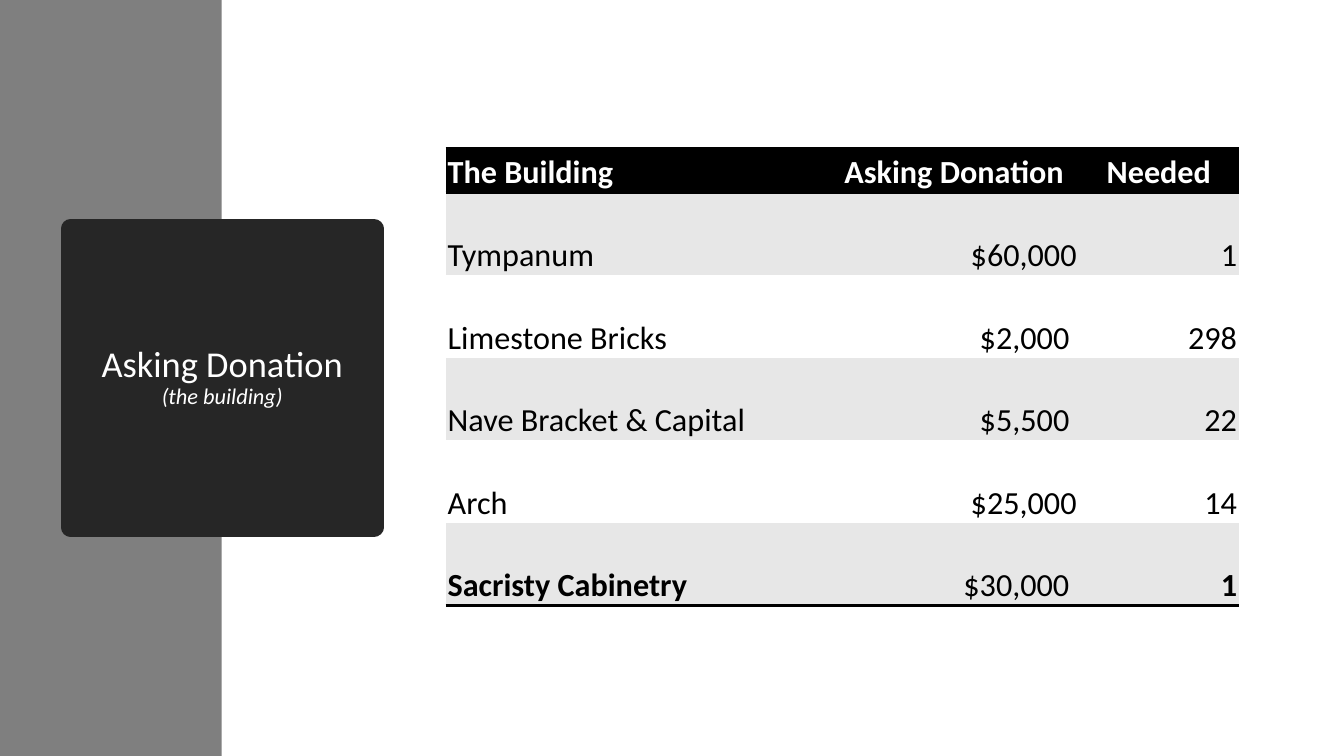
from lxml import etree
from pptx import Presentation
from pptx.dml.color import RGBColor
from pptx.enum.shapes import MSO_SHAPE
from pptx.enum.text import MSO_ANCHOR, PP_ALIGN
from pptx.oxml.ns import qn
from pptx.util import Inches, Pt

RECTANGLE = MSO_SHAPE.RECTANGLE
LEFT, CENTER, RIGHT = PP_ALIGN.LEFT, PP_ALIGN.CENTER, PP_ALIGN.RIGHT
MIDDLE, BOTTOM = MSO_ANCHOR.MIDDLE, MSO_ANCHOR.BOTTOM

WHITE = RGBColor(0xFF, 0xFF, 0xFF)
BLACK = RGBColor(0x00, 0x00, 0x00)
SIDEBAR_GRAY = RGBColor(0x7F, 0x7F, 0x7F)
TITLE_GRAY = RGBColor(0x26, 0x26, 0x26)
BAND_GRAY = RGBColor(0xE7, 0xE7, 0xE7)

FONT = "Calibri"
SLIDE_WIDTH, SLIDE_HEIGHT = Inches(13.33), Inches(7.5)
SIDEBAR_SHARE = 0.165
TITLE_SIZE, SUBTITLE_SIZE, TABLE_SIZE = 26, 16, 23
NO_TABLE_STYLE = "{2D5ABB26-0587-4C30-8999-92F81FD0307C}"
COLUMN_WIDTHS = [Inches(3.81), Inches(2.47), Inches(1.59)]
HEADER_HEIGHT, ROW_HEIGHT = Inches(0.44), Inches(0.82)

HEADINGS = ["The Building", "Asking Donation", "Needed"]
DONATIONS = [
    ["Tympanum", " $60,000", "1"],
    ["Limestone Bricks", " $2,000 ", "298"],
    ["Nave Bracket & Capital", " $5,500 ", "22"],
    ["Arch", " $25,000", "14"],
    ["Sacristy Cabinetry", " $30,000 ", "1"],
]


def format_run(run, size, color, bold=False, italic=False):
    run.font.name = FONT
    run.font.size = Pt(size)
    run.font.color.rgb = color
    run.font.bold = bold
    run.font.italic = italic


def add_panel(slide, width_share, color):
    panel = slide.shapes.add_shape(
        RECTANGLE, 0, 0, int(SLIDE_WIDTH * width_share), SLIDE_HEIGHT)
    panel.shadow.inherit = False
    panel.fill.solid()
    panel.fill.fore_color.rgb = color
    panel.line.fill.background()


def place_title(slide, heading, subheading):
    title = slide.shapes.title
    slide.shapes._spTree.append(title._element)
    title.left, title.top = Inches(0.7), Inches(2.27)
    title.width, title.height = Inches(3.01), Inches(2.96)
    title.fill.solid()
    title.fill.fore_color.rgb = TITLE_GRAY
    title.line.color.rgb = TITLE_GRAY
    title.line.width = Pt(13.75)
    text_frame = title.text_frame
    text_frame.word_wrap = True
    text_frame.vertical_anchor = MIDDLE
    paragraph = text_frame.paragraphs[0]
    paragraph.text = f"{heading}\v{subheading}"
    paragraph.alignment = CENTER
    paragraph.line_spacing = 0.9
    line_break = paragraph._p.find(qn("a:br"))
    etree.SubElement(line_break, qn("a:rPr"), sz=str(TITLE_SIZE * 100))
    heading_run, subheading_run = paragraph.runs
    format_run(heading_run, TITLE_SIZE, WHITE)
    format_run(subheading_run, SUBTITLE_SIZE, WHITE, italic=True)


def add_border(cell, side):
    properties = cell._tc.get_or_add_tcPr()
    border = etree.SubElement(properties, qn(f"a:{side}"), w=str(Pt(2)))
    fill = etree.SubElement(border, qn("a:solidFill"))
    etree.SubElement(fill, qn("a:srgbClr"), val=str(BLACK))


def fill_cell(cell, text, alignment, fill, color, bold, borders):
    for side in borders:
        add_border(cell, side)
    cell.fill.solid()
    cell.fill.fore_color.rgb = fill
    cell.margin_left = cell.margin_right = cell.margin_top = Inches(0.02)
    cell.margin_bottom = 0
    cell.vertical_anchor = BOTTOM
    cell.text = text
    paragraph = cell.text_frame.paragraphs[0]
    paragraph.alignment = alignment
    format_run(paragraph.runs[0], TABLE_SIZE, color, bold)


def add_donation_table(slide):
    row_heights = [HEADER_HEIGHT] + [ROW_HEIGHT] * len(DONATIONS)
    frame = slide.shapes.add_table(
        len(row_heights), len(COLUMN_WIDTHS), Inches(4.42), Inches(1.47),
        sum(COLUMN_WIDTHS), sum(row_heights))
    table = frame.table
    table._tbl.tblPr.find(qn("a:tableStyleId")).text = NO_TABLE_STYLE
    table.horz_banding = False
    for column, width in zip(table.columns, COLUMN_WIDTHS):
        column.width = width
    for row, height in zip(table.rows, row_heights):
        row.height = height

    for column, heading in enumerate(HEADINGS):
        alignment = CENTER if column else LEFT
        fill_cell(table.cell(0, column), heading, alignment, BLACK, WHITE,
                  True, ["lnT", "lnB"])
    for row, values in enumerate(DONATIONS, start=1):
        last = row == len(DONATIONS)
        fill = BAND_GRAY if row % 2 else WHITE
        for column, value in enumerate(values):
            alignment = RIGHT if column else LEFT
            fill_cell(table.cell(row, column), value, alignment, fill, BLACK,
                      last and column != 1, ["lnB"] if last else [])


def main():
    presentation = Presentation()
    presentation.slide_width = SLIDE_WIDTH
    presentation.slide_height = SLIDE_HEIGHT
    slide = presentation.slides.add_slide(presentation.slide_layouts[5])
    slide.background.fill.solid()
    slide.background.fill.fore_color.rgb = BLACK
    add_panel(slide, 1, WHITE)
    add_panel(slide, SIDEBAR_SHARE, SIDEBAR_GRAY)
    place_title(slide, "Asking Donation", "(the building)")
    add_donation_table(slide)
    presentation.save("out.pptx")


if __name__ == "__main__":
    main()
